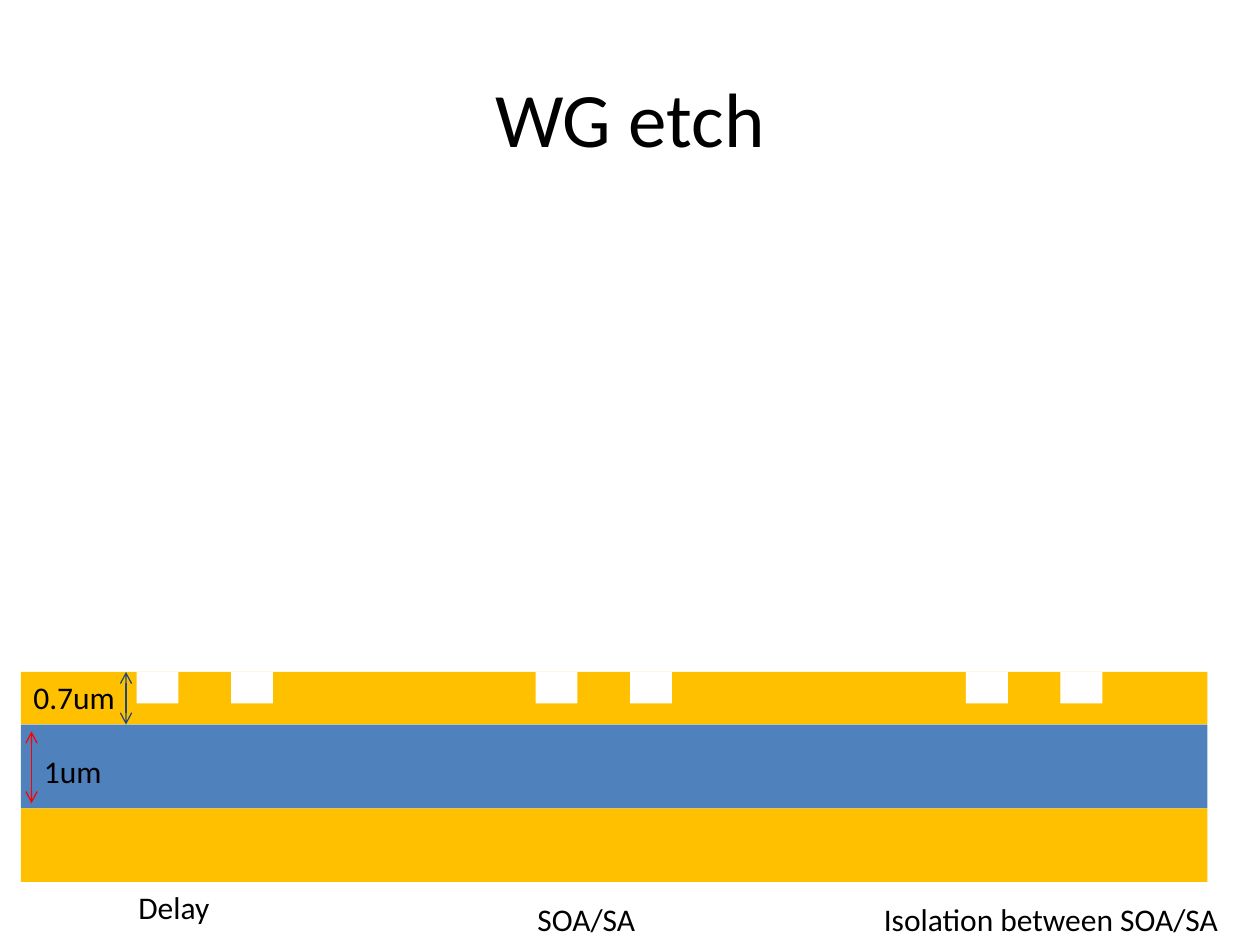
import pptx
import pptx.dml.color
import pptx.enum.shapes
import pptx.enum.text
import pptx.oxml
import pptx.oxml.ns
import pptx.util

Pt = pptx.util.Pt
FONT = "Calibri"
BLACK, WHITE, GOLD, BLUE = "000000", "FFFFFF", "FFC000", "4F81BD"


def color(value):
    return pptx.dml.color.RGBColor.from_string(value)


def format_text(text_frame, size):
    for paragraph in text_frame.paragraphs:
        for run in paragraph.runs:
            run.font.name = FONT
            run.font.size = Pt(size)
            run.font.color.rgb = color(BLACK)


def add_block(slide, left, top, width, height, fill):
    shape = slide.shapes.add_shape(
        pptx.enum.shapes.MSO_SHAPE.RECTANGLE, Pt(left), Pt(top), Pt(width), Pt(height))
    shape.shadow.inherit = False
    shape.fill.solid()
    shape.fill.fore_color.rgb = color(fill)
    shape.line.fill.background()


def add_label(slide, text, left, top, width):
    text_frame = slide.shapes.add_textbox(Pt(left), Pt(top), Pt(width), Pt(29)).text_frame
    text_frame.word_wrap = True
    text_frame.auto_size = pptx.enum.text.MSO_AUTO_SIZE.SHAPE_TO_FIT_TEXT
    text_frame.text = text
    format_text(text_frame, 18)


def add_height_arrow(slide, x, top, bottom, line_color):
    arrow = slide.shapes.add_connector(
        pptx.enum.shapes.MSO_CONNECTOR.STRAIGHT, Pt(x), Pt(top), Pt(x), Pt(bottom))
    arrow.line.color.rgb = color(line_color)
    arrow.line.width = Pt(0.75)
    namespace = pptx.oxml.ns.nsdecls("a")
    line = arrow.line._get_or_add_ln()
    for end in ("headEnd", "tailEnd"):
        line.append(pptx.oxml.parse_xml(f'<a:{end} {namespace} type="arrow"/>'))
    arrow._element.spPr.append(pptx.oxml.parse_xml(f"<a:effectLst {namespace}/>"))


def add_title(slide, text, left, top, width, height):
    title = slide.shapes.title
    title.left, title.top, title.width, title.height = map(Pt, (left, top, width, height))
    title.text_frame.text = text
    title.text_frame.vertical_anchor = pptx.enum.text.MSO_ANCHOR.MIDDLE
    title.text_frame.paragraphs[0].alignment = pptx.enum.text.PP_ALIGN.CENTER
    format_text(title.text_frame, 44)


def add_cross_section(slide, left, top, width):
    # Layers, from the top down
    layer_top = top
    for height, fill in ((30, GOLD), (48, BLUE), (42, GOLD)):
        add_block(slide, left, layer_top, width, height, fill)
        layer_top += height

    # A pair of etched trenches beside each waveguide
    for pair_left in (66, 294, 540):
        for offset in (0, 54):
            add_block(slide, left + pair_left + offset, top, 24, 18, WHITE)

    # Layer thicknesses
    add_height_arrow(slide, left + 6, top + 34, top + 75, "FF0000")
    add_label(slide, "1um", left + 6, top + 42, 72)
    add_height_arrow(slide, left + 60, top, top + 30, "1F497D")
    add_label(slide, "0.7um", left, top, 66)

    # Waveguide names
    for text, offset, drop, label_width in (
            ("Delay", 60, 120, 96),
            ("SOA/SA", 288, 127, 96),
            ("Isolation between SOA/SA", 486, 127, 222)):
        add_label(slide, text, left + offset, top + drop, label_width)


def main():
    presentation = pptx.Presentation()
    presentation.slide_width, presentation.slide_height = Pt(720), Pt(540)
    slide = presentation.slides.add_slide(presentation.slide_layouts[5])
    add_title(slide, "WG etch", 36, 21.6, 648, 90)
    add_cross_section(slide, 12, 384, 678)
    presentation.save("out.pptx")


if __name__ == "__main__":
    main()
